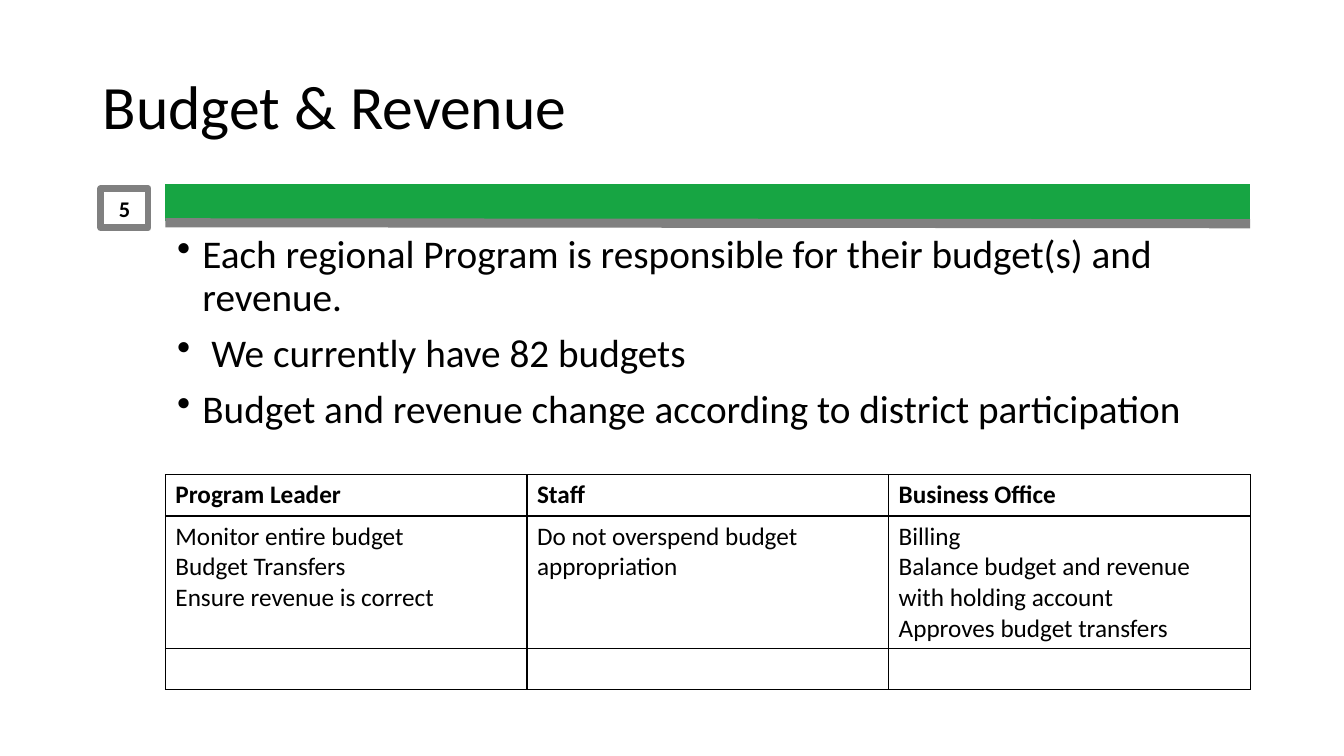
"""Builds the Budget & Revenue slide with its bullets and duties table."""
from lxml import etree
from pptx import Presentation
from pptx import util as u
from pptx.dml.color import RGBColor
from pptx.enum import shapes, text
from pptx.oxml.ns import qn

TITLE = "Budget & Revenue"
NUMBER = "5"
BULLETS = [
    "Each regional Program is responsible for their budget(s) and revenue.",
    " We currently have 82 budgets",
    "Budget and revenue change according to district participation",
]
DUTIES = [
    (["Program Leader"], ["Staff"], ["Business Office"]),
    (
        ["Monitor entire budget", "Budget Transfers", "Ensure revenue is correct"],
        ["Do not overspend budget appropriation"],
        ["Billing", "Balance budget and revenue with holding account",
         "Approves budget transfers"],
    ),
    ([""], [""], [""]),
]
ROW_HEIGHTS = [0.41, 1.31, 0.41]

FONT = "Calibri"
BLACK = RGBColor(0, 0, 0)
WHITE = RGBColor(255, 255, 255)
GREEN = RGBColor(0x17, 0xA5, 0x43)
GREY = RGBColor(0x80, 0x80, 0x80)

WIDTH, HEIGHT = 13.33, 7.5
LEFT, SPAN = 1.64, 10.76
RULES = [(2.01, 2.01, GREEN, 26.25), (2.21, 2.22, GREY, 6.5)]


def box(*lengths):
    return [u.Inches(n) for n in lengths]


def write(tf, lines, size, bold=False, align=text.PP_ALIGN.LEFT,
          spacing=None, before=None, bullet=None):
    for i, line in enumerate(lines):
        p = tf.add_paragraph() if i else tf.paragraphs[0]
        p.alignment, p.line_spacing = align, spacing
        if before is not None:
            p.space_before = u.Pt(before)
        p.font.size = u.Pt(size)
        if line:
            r = p.add_run()
            r.text = line
            r.font.name, r.font.size, r.font.bold = FONT, u.Pt(size), bold
            r.font.color.rgb = BLACK
        if bullet:
            pPr = p._p.get_or_add_pPr()
            pPr.set("marL", str(u.Inches(0.25)))
            pPr.set("indent", str(-u.Inches(0.25)))
            bu = etree.Element(qn("a:buChar"), char=bullet)
            pPr.insert_element_before(bu, "a:tabLst", "a:defRPr", "a:extLst")


def border(cell):
    tcPr = cell._tc.get_or_add_tcPr()
    for i, side in enumerate(("lnL", "lnR", "lnT", "lnB")):
        ln = etree.Element(qn("a:" + side), w=str(u.Pt(1)))
        fill = etree.SubElement(ln, qn("a:solidFill"))
        etree.SubElement(fill, qn("a:srgbClr"), val=str(BLACK))
        tcPr.insert(i, ln)


def main():
    prs = Presentation()
    prs.slide_width, prs.slide_height = box(WIDTH, HEIGHT)
    s = prs.slides.add_slide(prs.slide_layouts[5])

    title = s.shapes.title
    title.left, title.top, title.width, title.height = box(0.92, 0.36, 11.5, 1.45)
    title.text_frame.vertical_anchor = text.MSO_ANCHOR.MIDDLE
    write(title.text_frame, [TITLE], 44, spacing=0.9)

    body = s.shapes.add_textbox(*box(1.66, 2.28, SPAN, 2.15))
    body.text_frame.word_wrap = True
    write(body.text_frame, BULLETS, 28, spacing=0.9, before=10, bullet="•")

    for y1, y2, color, weight in RULES:
        rule = s.shapes.add_connector(
            shapes.MSO_CONNECTOR.STRAIGHT, *box(LEFT, y1, LEFT + SPAN, y2))
        rule.line.color.rgb, rule.line.width = color, u.Pt(weight)
        etree.SubElement(rule._element.spPr, qn("a:effectLst"))

    badge = s.shapes.add_shape(shapes.MSO_SHAPE.RECTANGLE, *box(1, 1.87, 0.47, 0.39))
    badge.shadow.inherit = False
    badge.fill.solid()
    badge.fill.fore_color.rgb = WHITE
    badge.line.color.rgb, badge.line.width = GREY, u.Pt(4.75)
    badge.text_frame.vertical_anchor = text.MSO_ANCHOR.MIDDLE
    write(badge.text_frame, [NUMBER], 16, bold=True, align=text.PP_ALIGN.CENTER)

    table = s.shapes.add_table(
        len(DUTIES), len(DUTIES[0]), *box(LEFT, 4.71, SPAN, sum(ROW_HEIGHTS))).table
    table.first_row = table.horz_banding = False
    for i, row in enumerate(DUTIES):
        table.rows[i].height = u.Inches(ROW_HEIGHTS[i])
        for j, lines in enumerate(row):
            cell = table.cell(i, j)
            cell.fill.solid()
            cell.fill.fore_color.rgb = WHITE
            border(cell)
            write(cell.text_frame, lines, 18, bold=i == 0)

    prs.save("out.pptx")


if __name__ == "__main__":
    main()
